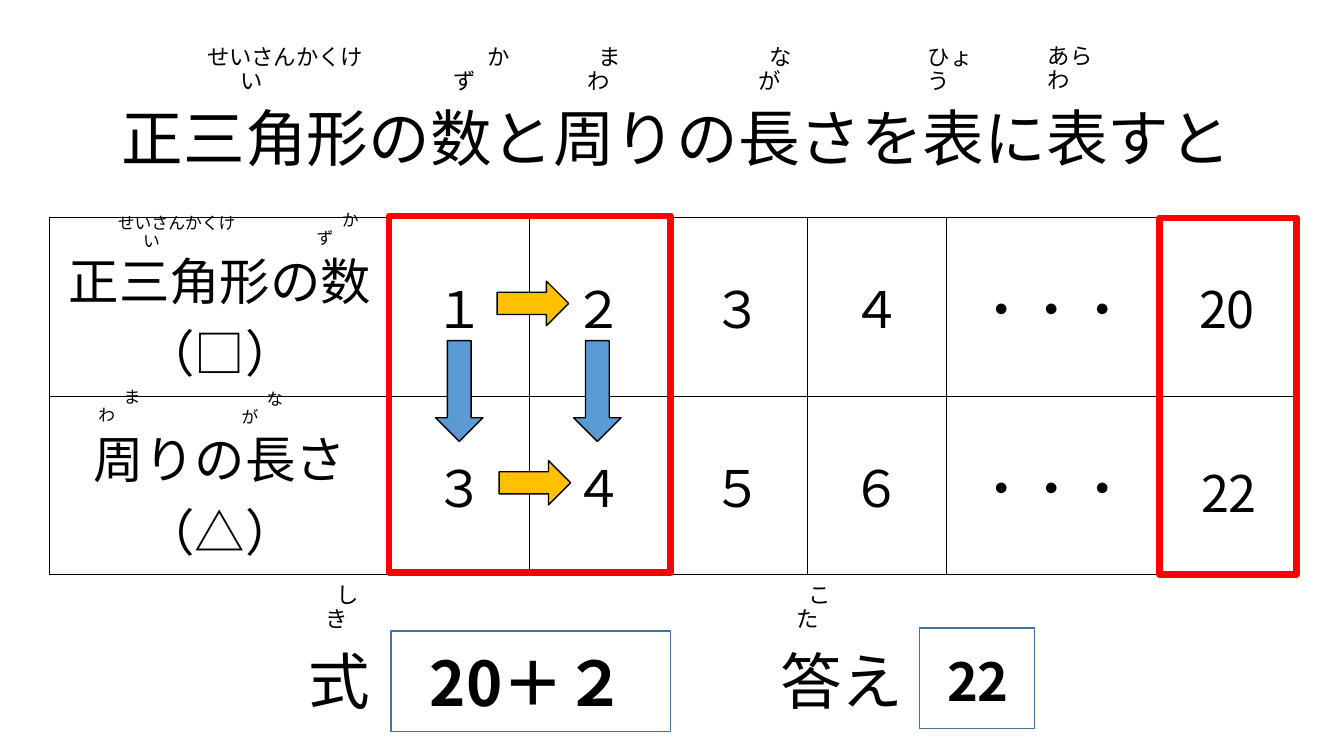
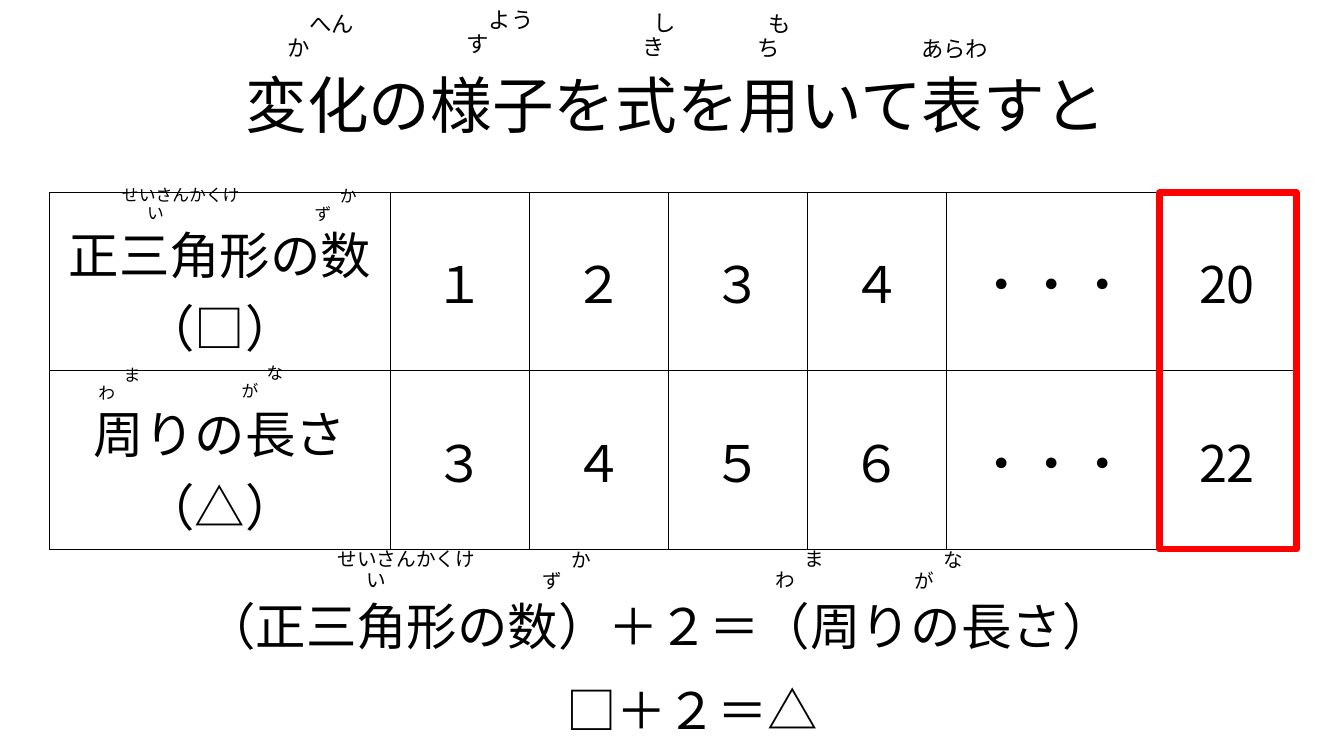
import pptx
import pptx.util
import pptx.dml.color
import pptx.enum.shapes
import pptx.enum.text
import pptx.oxml
import pptx.oxml.ns
import lxml.etree

Inches = pptx.util.Inches
Pt = pptx.util.Pt
PresetShape = pptx.enum.shapes.MSO_SHAPE
Anchor = pptx.enum.text.MSO_ANCHOR
Align = pptx.enum.text.PP_ALIGN
qn = pptx.oxml.ns.qn

FONT = "Noto Sans CJK JP"
BLACK = "000000"
RED = "FF0000"
BLUE = "5B9BD5"
FRAME_BLUE = "43739E"
AMBER = "FFC000"

TABLE_LEFT = 0.49
COLUMN_WIDTHS = [3.38, 1.38, 1.38, 1.38, 1.38, 2.09, 1.38]
ROW_HEIGHT = 1.77
TABLE_ROWS = [
    ["正三角形の数（□）", "１", "２", "３", "４", "・・・", "20"],
    ["周りの長さ（△）", "３", "４", "５", "６", "・・・", "22"],
]


def color(value):
    return pptx.dml.color.RGBColor.from_string(value)


def lengths(*values):
    return [Inches(value) for value in values]


def style_paragraph(paragraph, size, bold=False, spacing=None, align=Align.CENTER):
    paragraph.alignment = align
    paragraph.line_spacing = spacing
    paragraph.font.size = Pt(size)
    paragraph.font.bold = bold
    paragraph.font.color.rgb = color(BLACK)
    paragraph.font.name = FONT
    properties = paragraph._p.get_or_add_pPr()
    east_asian = lxml.etree.SubElement(properties.find(qn("a:defRPr")), qn("a:ea"))
    east_asian.set("typeface", FONT)


def add_text(shapes, text, box, size, bold=False, spacing=0.9):
    frame = shapes.add_textbox(*lengths(*box)).text_frame
    frame.word_wrap = True
    frame.vertical_anchor = Anchor.MIDDLE
    frame.text = text
    style_paragraph(frame.paragraphs[0], size, bold, spacing)


def add_reading(shapes, text, box, size, lag=1, first_count=None):
    first_count = first_count or len(text) - 1
    em = size / 72
    center = box[2] / 2
    first_start = center + (1 - first_count) * em / 2
    second_start = center - (0.5 + lag) * em
    slack = 0.08
    frame = shapes.add_textbox(*lengths(*box)).text_frame
    frame.word_wrap = True
    frame.vertical_anchor = Anchor.BOTTOM
    frame.margin_left = 0
    frame.margin_right = Inches(box[2] - first_start - first_count * em - slack)
    frame.text = text
    paragraph = frame.paragraphs[0]
    style_paragraph(paragraph, size, spacing=0.9, align=Align.LEFT)
    properties = paragraph._p.get_or_add_pPr()
    properties.set("marL", str(Inches(second_start)))
    properties.set("indent", str(Inches(first_start - second_start)))


def add_readings(shapes, readings, size):
    for text, box, *options in readings:
        add_reading(shapes, text, box, size, *options)


def add_preset(shapes, kind, box, line, width=1, fill=None):
    shape = shapes.add_shape(kind, *lengths(*box))
    shape.shadow.inherit = False
    shape.line.color.rgb = color(line)
    shape.line.width = Pt(width)
    if fill:
        shape.fill.solid()
        shape.fill.fore_color.rgb = color(fill)
    else:
        shape.fill.background()


def add_titled_slide(presentation, text, box, readings):
    slide = presentation.slides.add_slide(presentation.slide_layouts[5])
    title = slide.shapes.title
    title.left, title.top, title.width, title.height = lengths(*box)
    title.text_frame.text = text
    title.text_frame.vertical_anchor = Anchor.MIDDLE
    style_paragraph(title.text_frame.paragraphs[0], 44, spacing=0.9)
    add_readings(slide.shapes, readings, 16)
    return slide


def add_cell_borders(cell):
    properties = cell._tc.get_or_add_tcPr()
    for position, side in enumerate(("lnL", "lnR", "lnT", "lnB")):
        line = pptx.oxml.parse_xml(
            f'<a:{side} {pptx.oxml.ns.nsdecls("a")} w="{Pt(1)}"><a:solidFill>'
            f'<a:srgbClr val="{BLACK}"/></a:solidFill></a:{side}>'
        )
        properties.insert(position, line)


def add_value_table(slide, top, rows, readings):
    width = sum(COLUMN_WIDTHS)
    height = ROW_HEIGHT * len(rows)
    box = lengths(TABLE_LEFT, top, width, height)
    table = slide.shapes.add_table(len(rows), len(COLUMN_WIDTHS), *box).table
    table.first_row = False
    table.horz_banding = False
    for column, column_width in zip(table.columns, COLUMN_WIDTHS):
        column.width = Inches(column_width)
    for row, texts in zip(table.rows, rows):
        row.height = Inches(ROW_HEIGHT)
        for cell, text in zip(row.cells, texts):
            cell.text = text
            cell.vertical_anchor = Anchor.MIDDLE
            cell.fill.background()
            style_paragraph(cell.text_frame.paragraphs[0], 36)
            add_cell_borders(cell)
        row.cells[0].margin_top = Inches(0.2)
    highlight = (TABLE_LEFT + width - 1.36, top, 1.36, height)
    add_preset(slide.shapes, PresetShape.RECTANGLE, highlight, RED, 4.5)
    add_readings(slide.shapes, readings, 12)


def add_change_arrows(slide, left, top):
    shapes = slide.shapes
    add_preset(shapes, PresetShape.RECTANGLE, (left, top, 2.79, 3.54), RED, 4.5)
    for offset in (0.46, 1.83):
        box = (left + offset, top + 1.24, 0.47, 1)
        add_preset(shapes, PresetShape.DOWN_ARROW, box, BLACK, fill=BLUE)
    for across, down in ((1.07, 0.65), (1.09, 2.43)):
        box = (left + across, top + down, 0.71, 0.44)
        add_preset(shapes, PresetShape.RIGHT_ARROW, box, BLACK, fill=AMBER)


def add_answer_row(slide, top):
    shapes = slide.shapes
    add_text(shapes, "式", (2.61, top + 0.5, 1.52, 0.72), 44, spacing=0.8)
    add_text(shapes, "答え", (7.34, top + 0.5, 2.02, 0.72), 44, spacing=0.8)
    add_preset(shapes, PresetShape.RECTANGLE, (3.88, top + 0.31, 2.77, 1), FRAME_BLUE)
    add_preset(shapes, PresetShape.RECTANGLE, (9.12, top + 0.28, 1.14, 1), FRAME_BLUE)
    add_text(shapes, "20＋２", (4.06, top + 0.45, 2.35, 0.83), 44, True)
    add_text(shapes, "22", (9.22, top + 0.5, 0.96, 0.72), 37.4, True, 0.8)
    add_readings(shapes, [
        ("しき", (2.93, top, 0.81, 0.37), 0),
        ("こた", (7.61, top, 0.81, 0.37), 0),
    ], 16)


def add_formulas(slide, top):
    shapes = slide.shapes
    add_text(shapes, "（正三角形の数）＋２＝（周りの長さ）", (1.83, top + 0.2, 9.41, 0.99), 36)
    add_text(shapes, "□＋２＝△", (2.16, top + 1.03, 9.41, 0.99), 36)
    add_readings(shapes.add_group_shape().shapes, [
        ("せいさんかくけい", (2.92, top, 2.02, 0.37)),
        ("かず", (5.25, top, 0.84, 0.38)),
        ("まわ", (7.56, top - 0.01, 0.84, 0.38)),
        ("なが", (8.94, top, 0.84, 0.38)),
    ], 14)


def build_table_slide(presentation):
    slide = add_titled_slide(
        presentation, "正三角形の数と周りの長さを表に表すと", (0.46, 0.68, 12.51, 1.45), [
            ("せいさんかくけい", (1.71, 0.62, 2.02, 0.37)),
            ("かず", (4.38, 0.62, 0.91, 0.37)),
            ("まわ", (5.53, 0.62, 0.81, 0.37), 0),
            ("なが", (7.23, 0.62, 0.81, 0.37), 0),
            ("ひょう", (8.86, 0.62, 0.91, 0.37), 0),
            ("あらわ", (10.01, 0.61, 0.99, 0.37), 0),
        ])
    open_rows = [TABLE_ROWS[0], TABLE_ROWS[1][:-1] + [""]]
    add_value_table(slide, 2.16, open_rows, [
        ("せいさんかくけい", (0.66, 2.17, 2.02, 0.37)),
        ("かず", (2.97, 2.13, 0.84, 0.38)),
        ("まわ", (0.87, 3.92, 0.71, 0.35)),
        ("なが", (2.29, 3.94, 0.71, 0.35)),
    ])
    add_text(slide.shapes, "22", (11.71, 4.56, 0.96, 0.72), 36)
    add_change_arrows(slide, 3.86, 2.14)
    add_answer_row(slide, 5.95)


def build_formula_slide(presentation):
    slide = add_titled_slide(
        presentation, "変化の様子を式を用いて表すと", (0.96, 0.35, 11.5, 1.45), [
            ("へんか", (2.59, 0.29, 1.18, 0.37)),
            ("ようす", (4.37, 0.25, 1.18, 0.37)),
            ("しき", (6.08, 0.28, 0.81, 0.37), 0),
            ("もち", (7.22, 0.29, 0.81, 0.37), 0),
            ("あらわ", (8.79, 0.3, 1.14, 0.37), 0, 3),
        ])
    add_value_table(slide, 1.91, TABLE_ROWS, [
        ("せいさんかくけい", (0.7, 1.89, 2.02, 0.37)),
        ("かず", (2.95, 1.89, 0.84, 0.38)),
        ("まわ", (0.87, 3.7, 0.71, 0.35)),
        ("なが", (2.29, 3.68, 0.71, 0.35)),
    ])
    add_formulas(slide, 5.55)


def main():
    presentation = pptx.Presentation()
    presentation.slide_width, presentation.slide_height = lengths(13.33, 7.5)
    build_table_slide(presentation)
    build_formula_slide(presentation)
    presentation.save("out.pptx")


if __name__ == "__main__":
    main()
